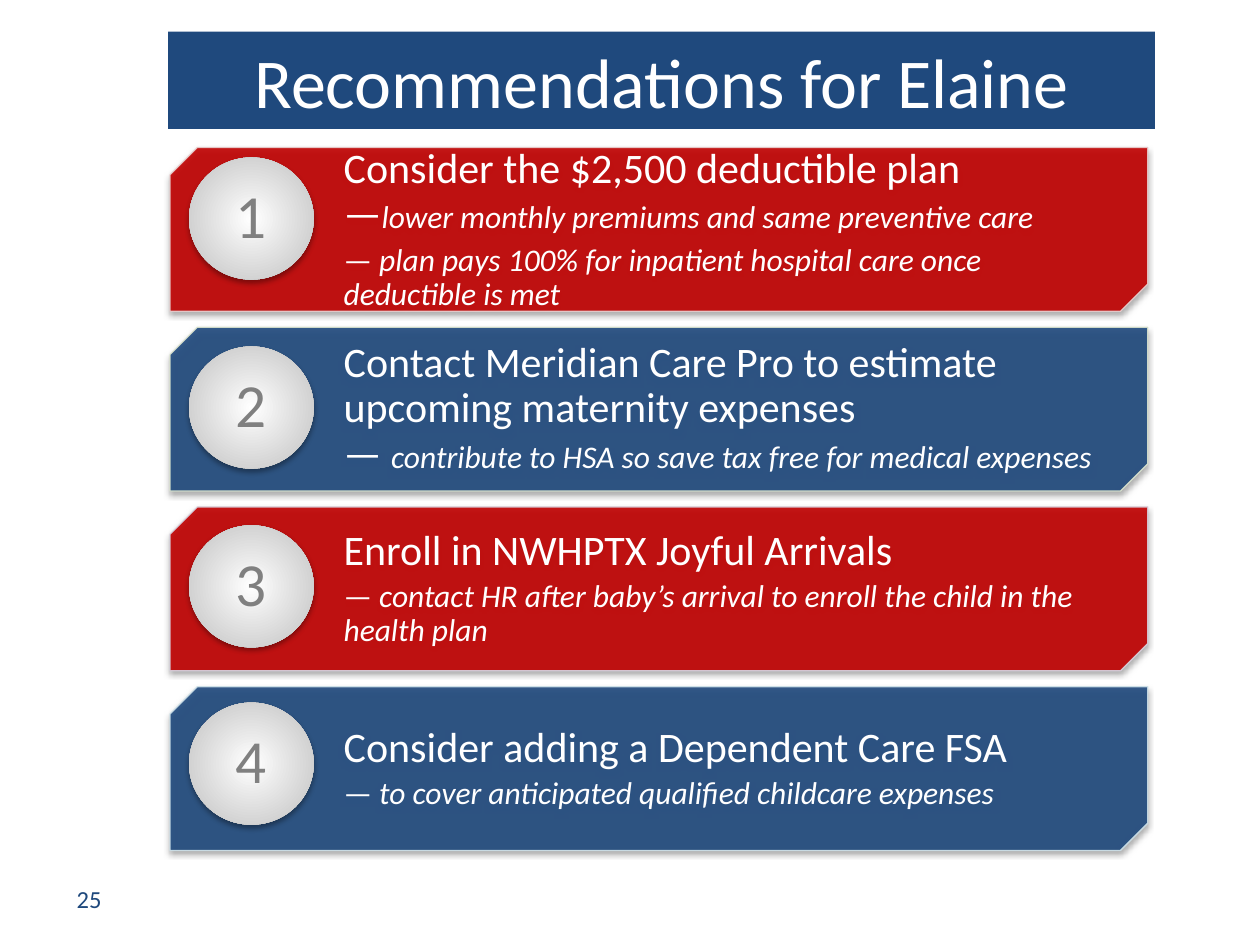
import pptx
import pptx.dml.color
import pptx.enum.shapes
import pptx.enum.text
import pptx.oxml
import pptx.oxml.ns
import pptx.util

Pt = pptx.util.Pt
SHAPE = pptx.enum.shapes.MSO_SHAPE
ALIGN = pptx.enum.text.PP_ALIGN
MIDDLE = pptx.enum.text.MSO_ANCHOR.MIDDLE

COLORS = {
    "navy": "1F497D", "red": "C00000", "white": "FFFFFF", "silver": "BFBFBF",
    "gray": "808080", "rose edge": "E8D0D0", "green edge": "DEE7D1",
    "violet edge": "D8D3E0", "aqua edge": "D0E3EA", "shadow": "000000",
}
FONT = "Calibri"
TITLE = "Recommendations for Elaine"
PAGE_NUMBER = "25"

BREAK = "line break"
STYLES = {"heading": (24, False), "dash": (18, False), "detail": (18, True)}

# fill, edge, distance from card top to badge top, paragraphs of (style, text)
RECOMMENDATIONS = [
    ("red", "rose edge", 5.7, [
        [("heading", "Consider the $2,500 deductible plan"), BREAK,
         ("heading", "—"),
         ("detail", "lower monthly premiums and same preventive care")],
        [("dash", "— "),
         ("detail", "plan pays 100% for inpatient hospital care once deductible is met")],
    ]),
    ("navy", "green edge", 11, [
        [("heading", "Contact Meridian Care Pro to estimate upcoming maternity expenses"),
         BREAK, ("heading", "— "),
         ("detail", "contribute to HSA so save tax free for medical expenses")],
    ]),
    ("red", "violet edge", 10.5, [
        [("heading", "Enroll in NWHPTX Joyful Arrivals")],
        [("dash", "— "),
         ("detail", "contact HR after baby’s arrival to enroll the child in the health plan")],
    ]),
    ("navy", "aqua edge", 9.1, [
        [("heading", "Consider adding a Dependent Care FSA")],
        [("dash", "— "),
         ("detail", "to cover anticipated qualified childcare expenses")],
    ]),
]

CARD_LEFT, CARD_TOP, CARD_WIDTH, CARD_HEIGHT = 97.2, 84.3, 558.7, 93.6
CARD_PITCH = 102.7
BADGE_LEFT, BADGE_WIDTH, BADGE_HEIGHT = 108, 71.3, 69.8
TEXT_INDENT = 72


def rgb(name):
    return pptx.dml.color.RGBColor.from_string(COLORS[name])


def add_run(paragraph, text, size, color, italic=False):
    run = paragraph.add_run()
    run.text = text
    run.font.name = FONT
    run.font.size = Pt(size)
    run.font.italic = italic
    run.font.color.rgb = rgb(color)


def set_frame(shape, side, top):
    """Wrap and centre the text vertically, with the given insets."""
    frame = shape.text_frame
    frame.word_wrap = True
    frame.vertical_anchor = MIDDLE
    frame.margin_left = frame.margin_right = Pt(side)
    frame.margin_top = frame.margin_bottom = Pt(top)
    return frame


def add_xml(parent, xml):
    namespace = pptx.oxml.ns.nsdecls("a")
    parent.append(pptx.oxml.parse_xml(xml.replace(" ", f" {namespace} ", 1)))


def add_shadow(shape):
    shape.shadow.inherit = False
    effects = shape._element.spPr.find(pptx.oxml.ns.qn("a:effectLst"))
    add_xml(effects, f'<a:outerShdw blurRad="{Pt(3.1)}" dist="{Pt(1.8)}" '
                     'dir="5400000" rotWithShape="0">'
                     f'<a:srgbClr val="{COLORS["shadow"]}"><a:alpha val="35000"/>'
                     '</a:srgbClr></a:outerShdw>')


def add_card(slide, top, fill, edge, paragraphs):
    card = slide.shapes.add_shape(SHAPE.SNIP_2_DIAG_RECTANGLE, Pt(CARD_LEFT), Pt(top),
                                  Pt(CARD_WIDTH), Pt(CARD_HEIGHT))
    card.adjustments[0], card.adjustments[1] = 0.16667, 0
    card.fill.solid()
    card.fill.fore_color.rgb = rgb(fill)
    card.line.color.rgb = rgb(edge)
    card.line.width = Pt(0.75)
    for color in card._element.spPr.iter(pptx.oxml.ns.qn("a:srgbClr")):
        add_xml(color, '<a:alpha val="90000"/>')
    add_shadow(card)

    frame = set_frame(card, 19.4, 10.1)
    for index, parts in enumerate(paragraphs):
        paragraph = frame.add_paragraph() if index else frame.paragraphs[0]
        paragraph.alignment = ALIGN.LEFT
        paragraph.line_spacing = 0.9
        paragraph.space_after = Pt(3.6)
        paragraph._p.get_or_add_pPr().set("marL", str(Pt(TEXT_INDENT)))
        for part in parts:
            if part == BREAK:
                paragraph.add_line_break()
            else:
                style, text = part
                size, italic = STYLES[style]
                add_run(paragraph, text, size, "white", italic)


def add_badge(slide, top, number):
    badge = slide.shapes.add_shape(SHAPE.OVAL, Pt(BADGE_LEFT), Pt(top),
                                   Pt(BADGE_WIDTH), Pt(BADGE_HEIGHT))
    badge.fill.gradient()
    for stop, color, position in zip(badge.fill.gradient_stops, ("white", "silver"), (0, 1)):
        stop.color.rgb = rgb(color)
        stop.position = position
    gradient = badge._element.spPr.find(pptx.oxml.ns.qn("a:gradFill"))
    gradient.remove(gradient.find(pptx.oxml.ns.qn("a:lin")))
    add_xml(gradient, '<a:path path="circle">'
                      '<a:fillToRect l="50000" t="50000" r="50000" b="50000"/></a:path>')
    badge.line.fill.background()
    add_shadow(badge)
    paragraph = set_frame(badge, 10.8, 5).paragraphs[0]
    paragraph.alignment = ALIGN.CENTER
    paragraph.line_spacing = 0.9
    add_run(paragraph, str(number), 35, "gray")


def add_title(slide):
    title = slide.shapes.title
    title.left, title.top, title.width, title.height = Pt(96), Pt(18), Pt(564), Pt(55.7)
    title.fill.solid()
    title.fill.fore_color.rgb = rgb("navy")
    frame = set_frame(title, 7.2, 3.6)
    frame.auto_size = pptx.enum.text.MSO_AUTO_SIZE.NONE
    frame.paragraphs[0].alignment = ALIGN.CENTER
    add_run(frame.paragraphs[0], TITLE, 40, "white")


def add_page_number(slide):
    page = slide.shapes.add_textbox(Pt(18), Pt(499), Pt(66), Pt(28.8))
    paragraph = set_frame(page, 7.2, 3.6).paragraphs[0]
    paragraph.alignment = ALIGN.CENTER
    add_run(paragraph, PAGE_NUMBER, 14, "navy")


def main():
    deck = pptx.Presentation()
    deck.slide_width, deck.slide_height = Pt(720), Pt(540)
    slide = deck.slides.add_slide(deck.slide_layouts[5])
    add_title(slide)
    for index, (fill, edge, badge_offset, paragraphs) in enumerate(RECOMMENDATIONS):
        top = CARD_TOP + index * CARD_PITCH
        add_card(slide, top, fill, edge, paragraphs)
        add_badge(slide, top + badge_offset, index + 1)
    add_page_number(slide)
    deck.save("out.pptx")


if __name__ == "__main__":
    main()
